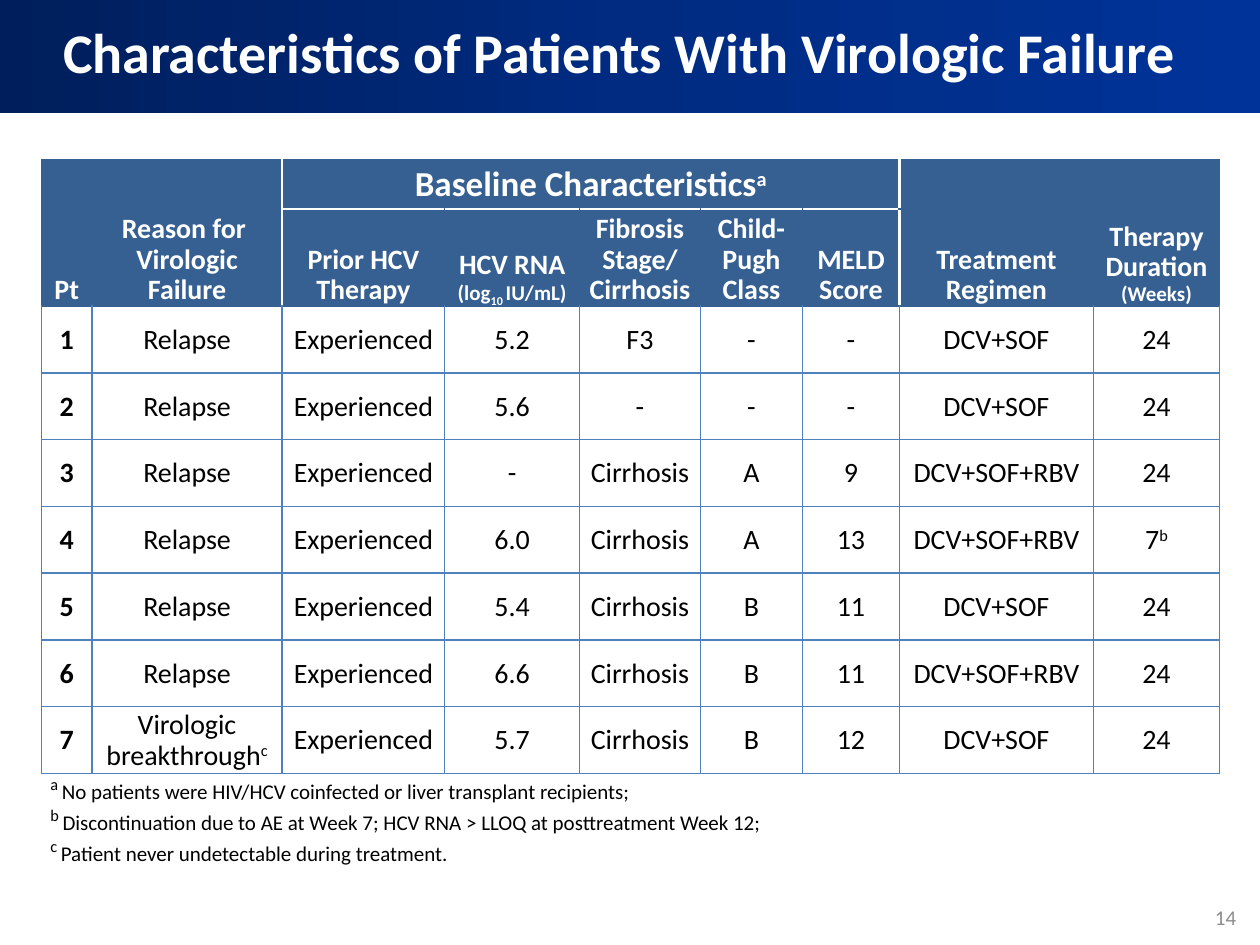
from copy import deepcopy

from lxml import etree
from pptx import Presentation
from pptx.dml.color import RGBColor
from pptx.enum.shapes import MSO_SHAPE
from pptx.enum.text import MSO_ANCHOR, PP_ALIGN
from pptx.oxml.ns import qn
from pptx.util import Inches, Pt

RECT = MSO_SHAPE.RECTANGLE
MIDDLE, BOTTOM = MSO_ANCHOR.MIDDLE, MSO_ANCHOR.BOTTOM
LEFT, CENTER, RIGHT = PP_ALIGN.LEFT, PP_ALIGN.CENTER, PP_ALIGN.RIGHT
WHITE = RGBColor(0xFF, 0xFF, 0xFF)
BLACK = RGBColor(0, 0, 0)
GREY = RGBColor(0x8C, 0x8C, 0x8C)
HEADER = RGBColor(0x37, 0x60, 0x92)
GRID = RGBColor(0x4F, 0x81, 0xBD)
BAND = [(0, RGBColor(0, 0x1E, 0x5B)), (0.5, RGBColor(0, 0x2B, 0x81)),
        (1, RGBColor(0, 0x33, 0x99))]
FONT = "Calibri"
SUPER, SUB = 30000, -25000

COL_WIDTHS = [0.4, 1.51, 1.29, 1.07, 0.96, 0.81, 0.77, 1.54, 1]
ROW_HEIGHTS = [0.39, 0.77] + [0.53] * 7 + [0.7]
BASE_FIRST, BASE_LAST = 2, 6
HEADINGS = [
    [("Pt",)],
    [("Reason for \nVirologic\nFailure",)],
    [("Prior HCV\nTherapy",)],
    [("HCV RNA ",), ("(log", 12), ("10 ", 12, SUB), ("IU/mL)", 12)],
    [("Fibrosis Stage/ Cirrhosis",)],
    [("Child-Pugh Class",)],
    [("MELD Score",)],
    [("Treatment Regimen",)],
    [("Therapy Duration ",), ("(Weeks)", 12)],
]
RELAPSE = [("Relapse",)]
BREAKTHROUGH = [("Virologic breakthrough",), ("c", 16, SUPER)]
WEEKS_24 = [("24",)]
PATIENTS = [
    (RELAPSE, "5.2", "F3", "-", "-", "DCV+SOF", WEEKS_24),
    (RELAPSE, "5.6", "-", "-", "-", "DCV+SOF", WEEKS_24),
    (RELAPSE, "-", "Cirrhosis", "A", "9", "DCV+SOF+RBV", WEEKS_24),
    (RELAPSE, "6.0", "Cirrhosis", "A", "13", "DCV+SOF+RBV", [("7",), ("b", 16, SUPER)]),
    (RELAPSE, "5.4", "Cirrhosis", "B", "11", "DCV+SOF", WEEKS_24),
    (RELAPSE, "6.6", "Cirrhosis", "B", "11", "DCV+SOF+RBV", WEEKS_24),
    (BREAKTHROUGH, "5.7", "Cirrhosis", "B", "12", "DCV+SOF", WEEKS_24),
]
FOOTNOTES = [
    ("a ", "No patients were HIV/HCV coinfected or liver transplant recipients;"),
    ("b ", "Discontinuation due to AE at Week 7; HCV RNA > LLOQ at posttreatment Week 12;"),
    ("c ", "Patient never undetectable during treatment."),
]


def set_attrs(obj, **values):
    """Set several attributes of one object."""
    for name, value in values.items():
        setattr(obj, name, value)


def add_run(p, text, size=16, baseline=0, color=BLACK, bold=False):
    """Add formatted text, with line breaks at newlines."""
    for i, line in enumerate(text.split("\n")):
        if i:
            p.add_line_break()
        r = p.add_run()
        r.text = line
        set_attrs(r.font, name=FONT, size=Pt(size), bold=bold)
        r.font.color.rgb = color
        if baseline:
            r.font._element.set("baseline", str(baseline))


def fill_paragraph(p, runs, align=CENTER, spacing=0.9, **fmt):
    """Lay out one paragraph from (text, size, baseline) runs."""
    set_attrs(p, alignment=align, line_spacing=spacing)
    for run in runs:
        add_run(p, *run, **fmt)


def add_band(slide):
    """Draw the gradient band behind the title."""
    sp = slide.shapes.add_shape(RECT, 0, 0, Inches(10), Inches(0.9))
    sp.shadow.inherit = False
    sp.line.fill.background()
    sp.fill.gradient()
    sp.fill.gradient_angle = 0
    stops = sp._element.spPr.find(qn("a:gradFill")).find(qn("a:gsLst"))
    stops.insert(1, deepcopy(stops[0]))
    for stop, (position, color) in zip(sp.fill.gradient_stops, BAND):
        stop.position = position
        stop.color.rgb = color
    slide.shapes._spTree.insert(2, sp._element)


def add_title(slide, text):
    """Place and format the title placeholder."""
    sp = slide.shapes.title
    set_attrs(sp, left=0, top=0, width=Inches(10), height=Inches(0.9))
    tf = sp.text_frame
    set_attrs(tf, margin_left=Inches(0.5), vertical_anchor=MIDDLE, word_wrap=True)
    fill_paragraph(tf.paragraphs[0], [(text, 32)], LEFT, 0.85, color=WHITE, bold=True)


def add_page_number(slide, text):
    """Add the page number in the lower right corner."""
    sp = slide.shapes.add_textbox(Inches(9.51), Inches(7.13), Inches(0.4), Inches(0.3))
    set_attrs(sp.text_frame, vertical_anchor=MIDDLE, word_wrap=False)
    fill_paragraph(sp.text_frame.paragraphs[0], [(text, 12)], RIGHT, 1.0, color=GREY)


def set_borders(cell, edges):
    """Draw cell borders from (colour, width) pairs in L, R, T, B order."""
    tc_pr = cell._tc.get_or_add_tcPr()
    for side, edge in zip("LRTB", edges):
        ln = etree.SubElement(tc_pr, qn(f"a:ln{side}"))
        if edge is None:
            etree.SubElement(ln, qn("a:noFill"))
            continue
        color, width = edge
        ln.set("w", str(Pt(width)))
        solid = etree.SubElement(ln, qn("a:solidFill"))
        etree.SubElement(solid, qn("a:srgbClr")).set("val", str(color))


def format_cell(cell, edges, anchor=MIDDLE, fill=None):
    """Set the margins, anchor, borders and fill of a cell."""
    margin = Inches(0.01)
    set_attrs(cell, margin_left=margin, margin_right=margin, margin_top=margin,
              margin_bottom=0, vertical_anchor=anchor)
    set_borders(cell, edges)
    if fill is None:
        cell.fill.background()
    else:
        cell.fill.solid()
        cell.fill.fore_color.rgb = fill


def header_edges(row, col, last):
    """Frame the baseline columns in white inside the header."""
    def edge(is_white):
        return (WHITE, 1.5) if is_white else (HEADER, 1)
    in_base = BASE_FIRST <= col <= BASE_LAST
    return [edge(col in (BASE_FIRST, BASE_LAST + 1)),
            edge(last in (BASE_FIRST - 1, BASE_LAST)),
            edge(row == 1 and in_base), edge(row == 0 and in_base)]


def fill_header(table):
    """Fill the two header rows."""
    table.cell(0, BASE_FIRST).merge(table.cell(0, BASE_LAST))
    for col, heading in enumerate(HEADINGS):
        for row in (0, 1):
            cell = table.cell(row, col)
            last = BASE_LAST if cell.is_merge_origin else col
            format_cell(cell, header_edges(row, col, last), BOTTOM if row else MIDDLE, HEADER)
        fill_paragraph(table.cell(1, col).text_frame.paragraphs[0], heading,
                       color=WHITE, bold=True)
    fill_paragraph(table.cell(0, BASE_FIRST).text_frame.paragraphs[0],
                   [("Baseline Characteristics", 20), ("a", 20, SUPER)],
                   color=WHITE, bold=True)


def fill_patients(table):
    """Fill one row for each patient."""
    for number, (reason, *values, weeks) in enumerate(PATIENTS, 1):
        plain = [[(value,)] for value in ["Experienced", *values]]
        top = (HEADER if number == 1 else GRID, 1)
        for col, runs in enumerate([[(str(number),)], reason, *plain, weeks]):
            cell = table.cell(number + 1, col)
            format_cell(cell, [(GRID, 1), (GRID, 1), top, (GRID, 1)])
            fill_paragraph(cell.text_frame.paragraphs[0], runs, bold=col == 0)


def fill_footnotes(table):
    """Fill the merged last row with the footnotes."""
    row, last = len(ROW_HEIGHTS) - 1, len(COL_WIDTHS) - 1
    table.cell(row, 0).merge(table.cell(row, last))
    for col in range(last + 1):
        format_cell(table.cell(row, col), [None, None, (GRID, 1), None])
    tf = table.cell(row, 0).text_frame
    for i, (mark, note) in enumerate(FOOTNOTES):
        p = tf.add_paragraph() if i else tf.paragraphs[0]
        fill_paragraph(p, [(mark, 16, SUPER), (note, 12)], LEFT)
        p._p.get_or_add_pPr().set("marL", str(Inches(0.06)))


def add_patient_table(slide):
    """Add the table of patients with virologic failure."""
    table = slide.shapes.add_table(
        len(ROW_HEIGHTS), len(COL_WIDTHS), Inches(0.33), Inches(1.27),
        Inches(sum(COL_WIDTHS)), Inches(sum(ROW_HEIGHTS))).table
    set_attrs(table, first_row=False, horz_banding=False)
    for column, width in zip(table.columns, COL_WIDTHS):
        column.width = Inches(width)
    for row, height in zip(table.rows, ROW_HEIGHTS):
        row.height = Inches(height)
    fill_header(table)
    fill_patients(table)
    fill_footnotes(table)


def main():
    """Build the slide and save it."""
    prs = Presentation()
    set_attrs(prs, slide_width=Inches(10), slide_height=Inches(7.5))
    s = prs.slides.add_slide(prs.slide_layouts[5])
    add_band(s)
    add_page_number(s, "14")
    add_title(s, "Characteristics of Patients With Virologic Failure")
    add_patient_table(s)
    prs.save("out.pptx")


if __name__ == "__main__":
    main()
